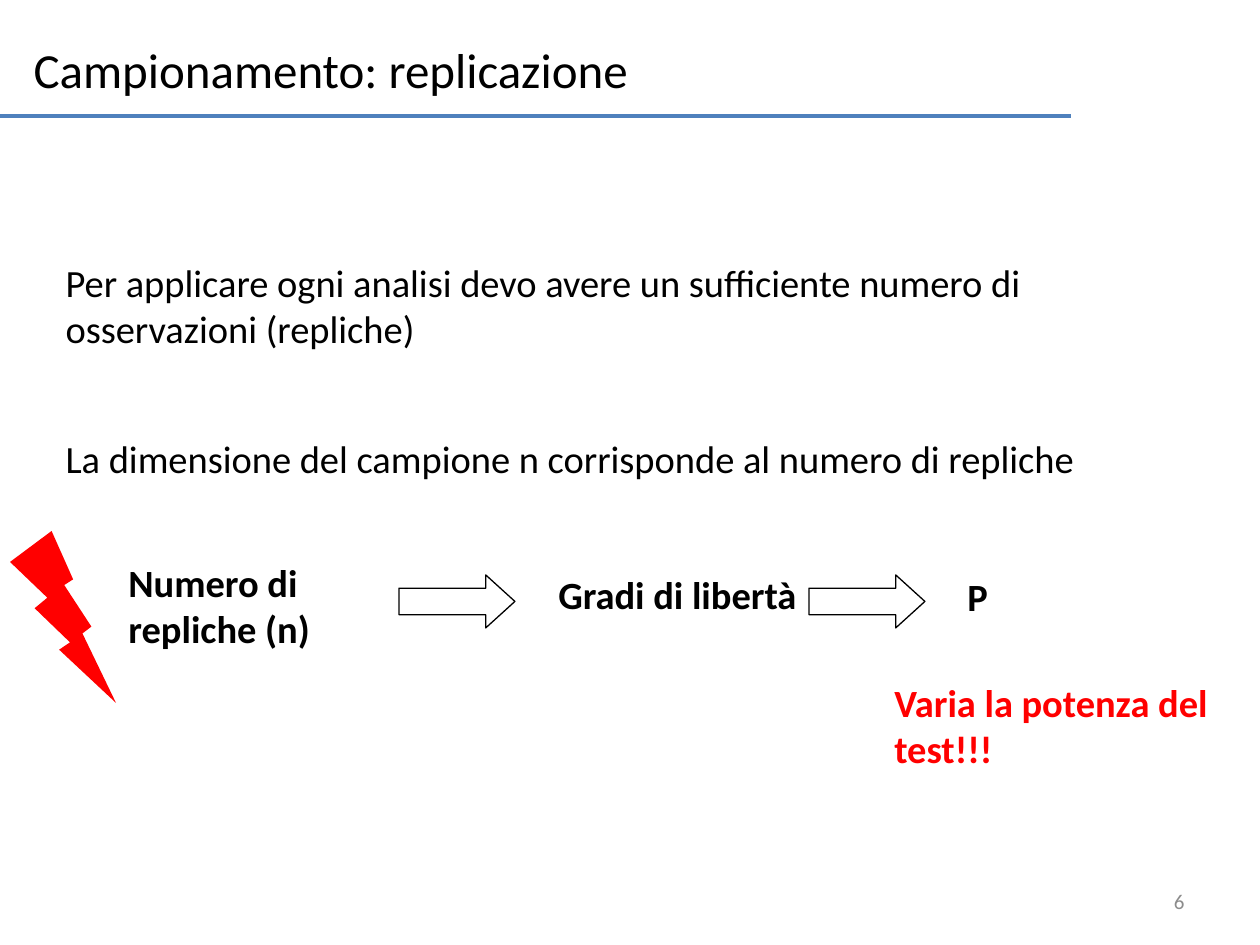
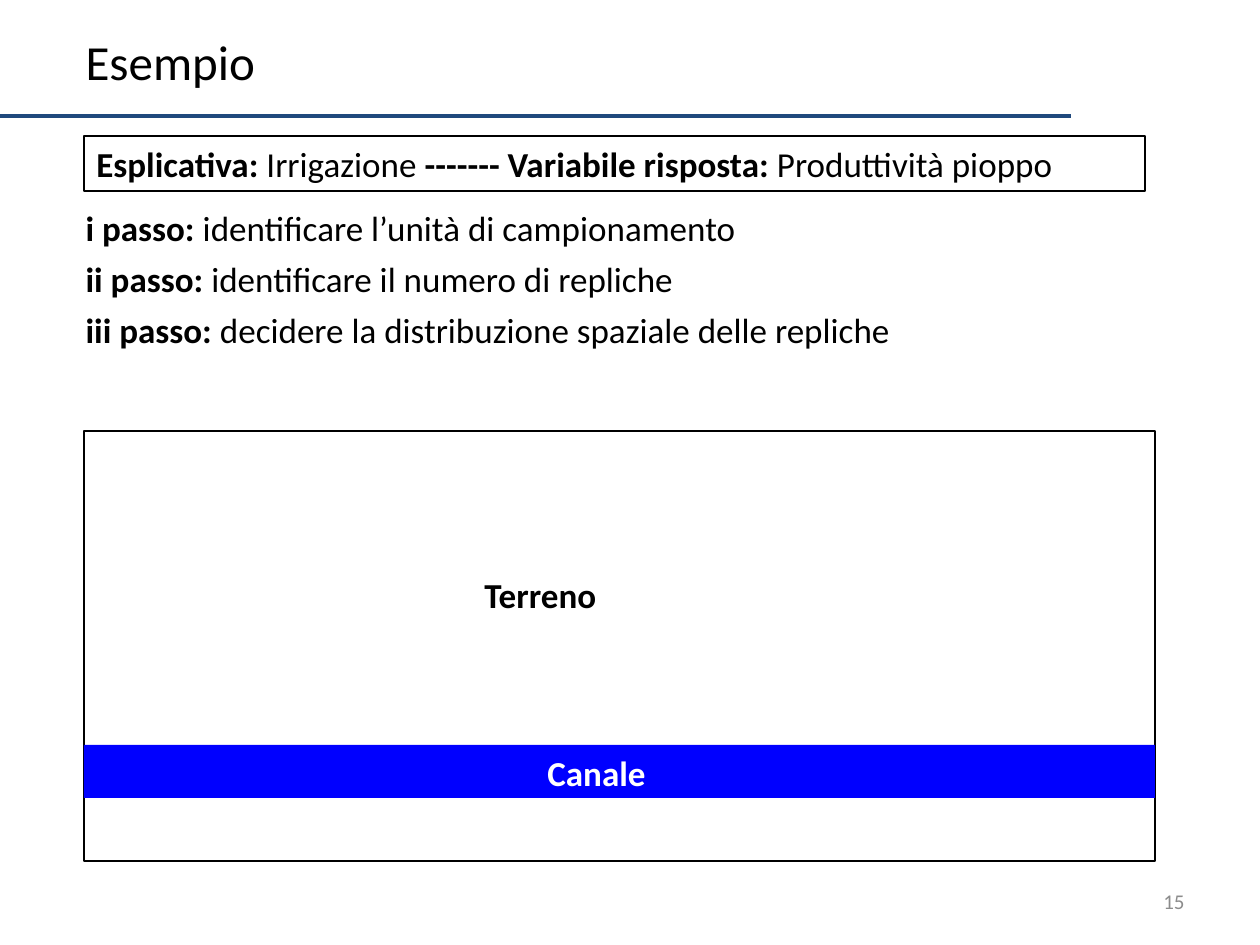
from lxml import etree
from pptx import Presentation, util as u
from pptx.dml.color import RGBColor
from pptx.enum import shapes, text
from pptx.oxml.ns import qn

# Shared style
SCALE = 914400 // 126  # EMU in one px
FONT = "Calibri"
BLACK, WHITE, RED, GREY = "000000", "FFFFFF", "FF0000", "8C8C8C"
LIGHT_RULE, DARK_RULE, CANAL_BLUE = "4F81BD", "1F497D", "0000FF"
TITLE_SIZE, NUMBER_SIZE = 28, 12
KIND = shapes.MSO_SHAPE


def px(*lengths):
    return [u.Emu(length * SCALE) for length in lengths]


def color(hex_string):
    return RGBColor.from_string(hex_string)


def write(shape, paragraphs, size=20, fill=BLACK, bold=False,
          align=text.PP_ALIGN.LEFT, gap=0, wrap=True):
    """Each paragraph is a string or a list of (string, bold) runs."""
    frame = shape.text_frame
    frame.word_wrap = wrap
    frame.auto_size = text.MSO_AUTO_SIZE.NONE
    frame.vertical_anchor = text.MSO_ANCHOR.MIDDLE
    for index, content in enumerate(paragraphs):
        para = frame.paragraphs[0] if index == 0 else frame.add_paragraph()
        para.alignment = align
        para.space_before = u.Pt(gap if index else 0)
        runs = [(content, bold)] if isinstance(content, str) else content
        for words, heavy in runs:
            span = para.add_run()
            span.text = words
            span.font.name = FONT
            span.font.size = u.Pt(size)
            span.font.bold = heavy
            span.font.color.rgb = color(fill)


def add_text(page, place, *paragraphs, **style):
    box = page.shapes.add_textbox(*px(*place))
    write(box, paragraphs, **style)
    return box


def place_holder(holder, place):
    holder.left, holder.top, holder.width, holder.height = px(*place)


def fill_body(page, place, *paragraphs, **style):
    body = page.placeholders[1]
    place_holder(body, place)
    write(body, paragraphs, **style)
    for para in body.text_frame.paragraphs:
        props = para._p.get_or_add_pPr()
        props.set("marL", "0")
        props.set("indent", "0")
        etree.SubElement(props, qn("a:buNone"))


def add_figure(page, kind, place, fill=None, line=None):
    figure = page.shapes.add_shape(kind, *px(*place))
    figure.shadow.inherit = False
    if fill:
        figure.fill.solid()
        figure.fill.fore_color.rgb = color(fill)
    else:
        figure.fill.background()
    if line:
        figure.line.color.rgb = color(line)
        figure.line.width = u.Pt(0.75)
    else:
        figure.line.fill.background()
    return figure


def add_page(deck, title, title_place, number, rule_color):
    page = deck.slides.add_slide(deck.slide_layouts[1])
    # Title
    place_holder(page.shapes.title, title_place)
    write(page.shapes.title, [title], size=TITLE_SIZE, wrap=False)
    # Rule under the title
    rule = page.shapes.add_connector(
        shapes.MSO_CONNECTOR.STRAIGHT, *px(0, 116, 1071, 116))
    rule.line.color.rgb = color(rule_color)
    rule.line.width = u.Pt(2)
    etree.SubElement(rule._element.spPr, qn("a:effectLst"))
    # Page number
    add_text(page, (903, 876, 294, 50), number, size=NUMBER_SIZE,
             fill=GREY, align=text.PP_ALIGN.RIGHT)
    return page


def build_replication(deck):
    page = add_page(deck, "Campionamento: replicazione",
                    (21, 33, 635, 72), "6", LIGHT_RULE)
    fill_body(
        page, (53, 251, 1155, 238),
        "Per applicare ogni analisi devo avere un sufficiente numero di "
        "osservazioni (repliche)",
        "La dimensione del campione n corrisponde al numero di repliche",
        size=22, gap=48)

    # Chain from replicates to P
    add_text(page, (116, 552, 420, 106), "Numero di", "repliche (n)",
             size=22, bold=True)
    add_text(page, (546, 565, 514, 59), "Gradi di libertà",
             size=22, bold=True)
    add_text(page, (955, 567, 252, 59), "P", size=22, bold=True)
    for left in (399, 809):
        arrow = add_figure(page, KIND.RIGHT_ARROW, (left, 575, 116, 53),
                           fill=WHITE, line=BLACK)
        arrow.adjustments[1] = 0.55

    # Warning
    add_figure(page, KIND.LIGHTNING_BOLT, (10, 531, 106, 172), fill=RED)
    add_text(page, (882, 672, 378, 106), "Varia la potenza del test!!!",
             size=22, bold=True, fill=RED)


def build_example(deck):
    page = add_page(deck, "Esempio", (73, 25, 197, 72), "15", DARK_RULE)

    # Variables
    variables = add_figure(page, KIND.RECTANGLE, (84, 136, 1061, 55),
                           line=BLACK)
    write(variables, [[("Esplicativa: ", True), ("Irrigazione ", False),
                       ("------- Variabile risposta: ", True),
                       ("Produttività pioppo", False)]])

    # Sampling steps
    steps = [("i", "identificare l’unità di campionamento"),
             ("ii", "identificare il numero di repliche"),
             ("iii", "decidere la distribuzione spaziale delle repliche")]
    fill_body(page, (73, 199, 1050, 159),
              *[[(f"{numeral} passo: ", True), (task, False)]
                for numeral, task in steps], gap=5)

    # Field and canal
    add_figure(page, KIND.RECTANGLE, (84, 431, 1071, 430), line=BLACK)
    add_figure(page, KIND.RECTANGLE, (84, 745, 1071, 53), fill=CANAL_BLUE)
    add_text(page, (472, 567, 357, 55), "Terreno", bold=True)
    add_text(page, (535, 745, 158, 55), "Canale", bold=True, fill=WHITE)


def main():
    deck = Presentation()
    deck.slide_width, deck.slide_height = px(1260, 945)
    build_replication(deck)
    build_example(deck)
    deck.save("out.pptx")


if __name__ == "__main__":
    main()
